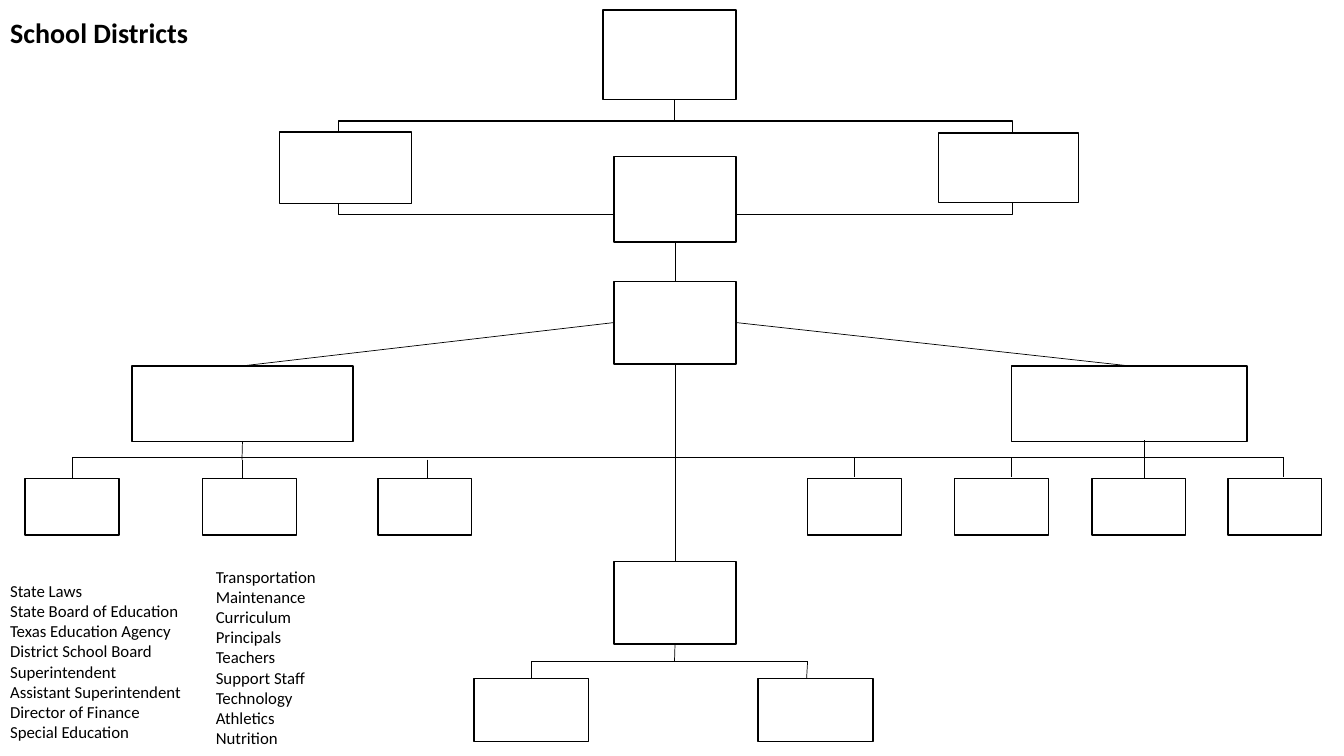
from lxml import etree
from pptx import Presentation
from pptx.dml.color import RGBColor
from pptx.enum.shapes import MSO_CONNECTOR as CONN, MSO_SHAPE as SHAPE
from pptx.enum.text import MSO_ANCHOR as ANCHOR, MSO_AUTO_SIZE as FIT, PP_ALIGN as ALIGN
from pptx.oxml.ns import qn
from pptx.util import Inches, Pt

COLORS = {"ink": "000000", "paper": "FFFFFF"}
TOP, LEFT, BOTTOM, RIGHT = range(4)
BODY_LISTS = [
    (0, 5.71, 2.01, 1.72,
     ["State Laws", "State Board of Education", "Texas Education Agency",
      "District School Board", "Superintendent", "Assistant Superintendent",
      "Director of Finance", "Special Education"]),
    (2.04, 5.57, 2.01, 1.92,
     ["Transportation", "Maintenance", "Curriculum", "Principals", "Teachers",
      "Support Staff", "Technology", "Athletics", "Nutrition"]),
]


class OrgChart:
    def __init__(self, slide, font="Calibri"):
        self.slide, self.shapes, self.font = slide, slide.shapes, font

    def color(self, name):
        return RGBColor.from_string(COLORS[name])

    def box(self, x, y, w, h, filled=False):
        sp = self.shapes.add_shape(SHAPE.RECTANGLE, *map(Inches, (x, y, w, h)))
        sp.shadow.inherit = False
        if filled:
            sp.fill.solid()
            sp.fill.fore_color.rgb = self.color("paper")
        else:
            sp.fill.background()
        sp.line.color.rgb = self.color("ink")
        sp.line.width = Pt(1)
        return sp

    def connector(self, kind, x0, y0, x1, y1):
        c = self.shapes.add_connector(kind, *map(Inches, (x0, y0, x1, y1)))
        c.line.color.rgb = self.color("ink")
        c.line.width = Pt(0.5)
        etree.SubElement(c._element.spPr, qn("a:effectLst"))
        return c

    def line(self, x0, y0, x1, y1, start=None, end=None):
        """Draw a straight line; start and end are optional (box, side) joins."""
        c = self.connector(CONN.STRAIGHT, x0, y0, x1, y1)
        if start:
            c.begin_connect(*start)
        if end:
            c.end_connect(*end)

    def corner(self, x0, y0, x1, y1):
        """Draw an elbow that goes up from (x0, y0), then right to (x1, y1)."""
        cx, cy = (x0 + x1) / 2, (y0 + y1) / 2
        dx, dy = (y0 - y1) / 2, (x1 - x0) / 2
        c = self.connector(CONN.ELBOW, cx + dx, cy + dy, cx - dx, cy - dy)
        sp_pr = c._element.spPr
        sp_pr.find(qn("a:xfrm")).set("rot", "5400000")
        sp_pr.find(qn("a:prstGeom")).set("prst", "bentConnector2")

    def text(self, sp, x, y, w, h, lines, size, bold=False):
        sp.left, sp.top, sp.width, sp.height = map(Inches, (x, y, w, h))
        tf = sp.text_frame
        tf.word_wrap = True
        tf.auto_size = FIT.SHAPE_TO_FIT_TEXT
        tf.vertical_anchor = ANCHOR.TOP
        for i, line in enumerate(lines):
            p = tf.add_paragraph() if i else tf.paragraphs[0]
            p_pr = p._p.get_or_add_pPr()
            p_pr.set("marL", "0")
            p_pr.set("indent", "0")
            etree.SubElement(p_pr, qn("a:buNone"))
            p.alignment = ALIGN.LEFT
            p.space_before = Pt(0)
            r = p.add_run()
            r.text = line
            r.font.name, r.font.size, r.font.bold = self.font, Pt(size), bold
            r.font.color.rgb = self.color("ink")


def main():
    prs = Presentation()
    prs.slide_width, prs.slide_height = Inches(13.33), Inches(7.5)
    s = prs.slides.add_slide(prs.slide_layouts[3])
    chart = OrgChart(s)

    chart.text(s.shapes.title, 0, 0.1, 3.36, 0.44, ["School Districts"], 20, bold=True)
    for sp, (x, y, w, h, lines) in zip(list(s.placeholders)[1:], BODY_LISTS):
        chart.text(sp, x, y, w, h, lines, 12)

    # State level
    chart.line(6.69, 1.2, 6.69, 0.99)
    chart.box(3.36, 1.2, 6.68, 0.93)
    chart.box(5.98, 0.1, 1.32, 0.89)
    chart.box(2.77, 1.31, 1.31, 0.71, filled=True)
    chart.box(9.31, 1.32, 1.39, 0.69, filled=True)

    # District level
    board = chart.box(6.09, 1.55, 1.21, 0.85, filled=True)
    head = chart.box(6.09, 2.79, 1.21, 0.82)
    right_deputy = chart.box(10.03, 3.63, 2.34, 0.75)
    left_deputy = chart.box(1.31, 3.63, 2.19, 0.75)
    chart.line(6.7, 2.79, 6.7, 2.4, (head, TOP), (board, BOTTOM))
    chart.line(2.4, 3.63, 6.09, 3.2, (left_deputy, TOP), (head, LEFT))
    chart.line(11.2, 3.63, 7.3, 3.2, (right_deputy, TOP), (head, RIGHT))

    # Departments
    for x in (0.25, 2.01, 3.75, 8.01, 9.47, 10.83, 12.18):
        chart.box(x, 4.75, 0.93, 0.56)
    chart.corner(0.72, 4.75, 12.73, 4.54)
    chart.line(2.4, 4.37, 2.4, 4.56, start=(left_deputy, BOTTOM))
    chart.line(11.35, 4.37, 11.35, 4.56)
    for x, y in ((2.4, 4.56), (4.24, 4.56), (8.47, 4.54),
                 (10.03, 4.54), (11.35, 4.56), (12.73, 4.54)):
        chart.line(x, y, x, y + 0.19)

    # Campus level
    campus = chart.box(6.09, 5.57, 1.21, 0.82)
    for x in (4.7, 7.52):
        chart.box(x, 6.73, 1.14, 0.63)
    chart.line(6.7, 3.61, 6.7, 5.57, (head, BOTTOM), (campus, TOP))
    chart.corner(5.27, 6.73, 8.01, 6.56)
    chart.line(6.7, 6.39, 6.69, 6.56, start=(campus, BOTTOM))
    chart.line(8.01, 6.56, 8, 6.73)

    prs.save("out.pptx")


if __name__ == "__main__":
    main()
